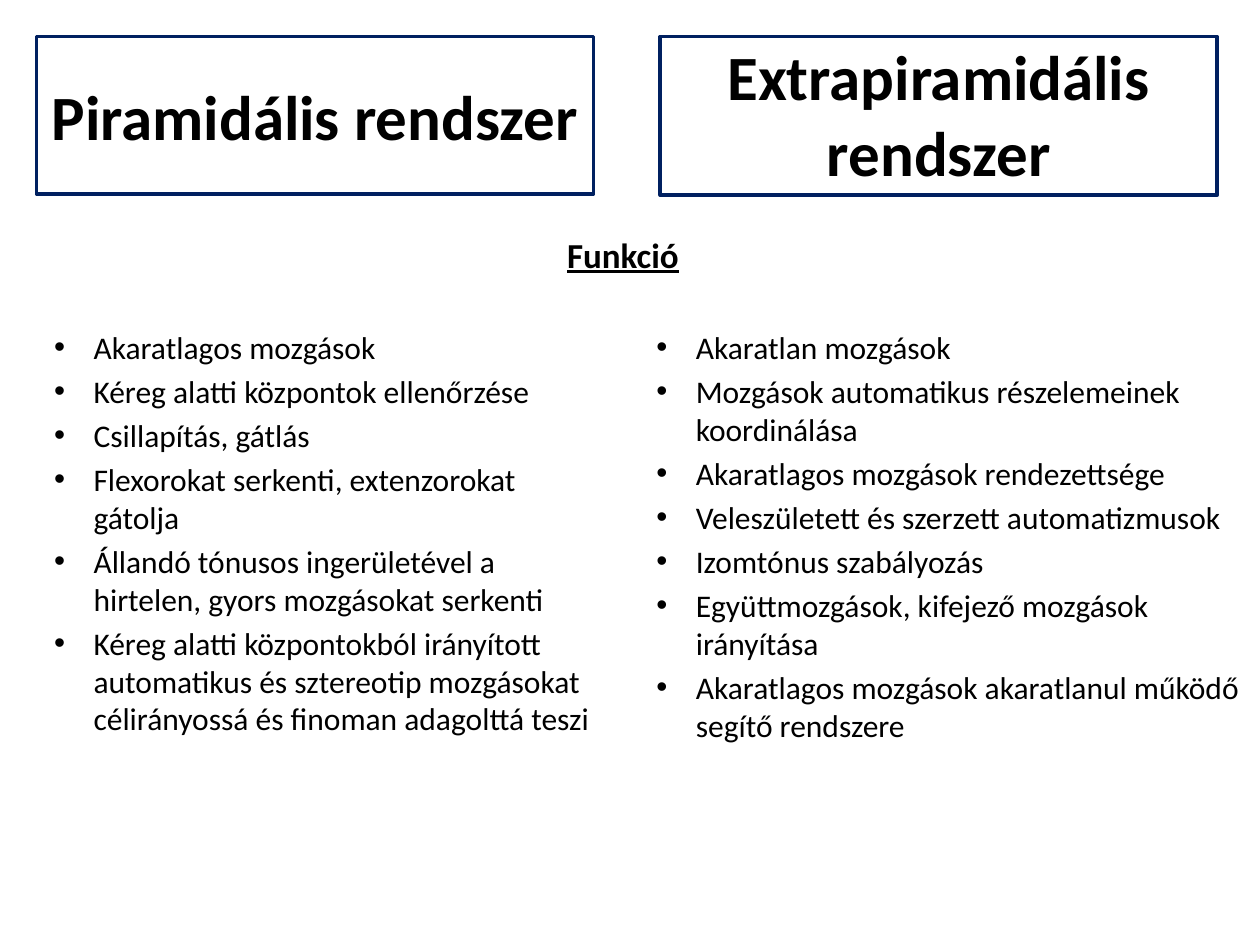
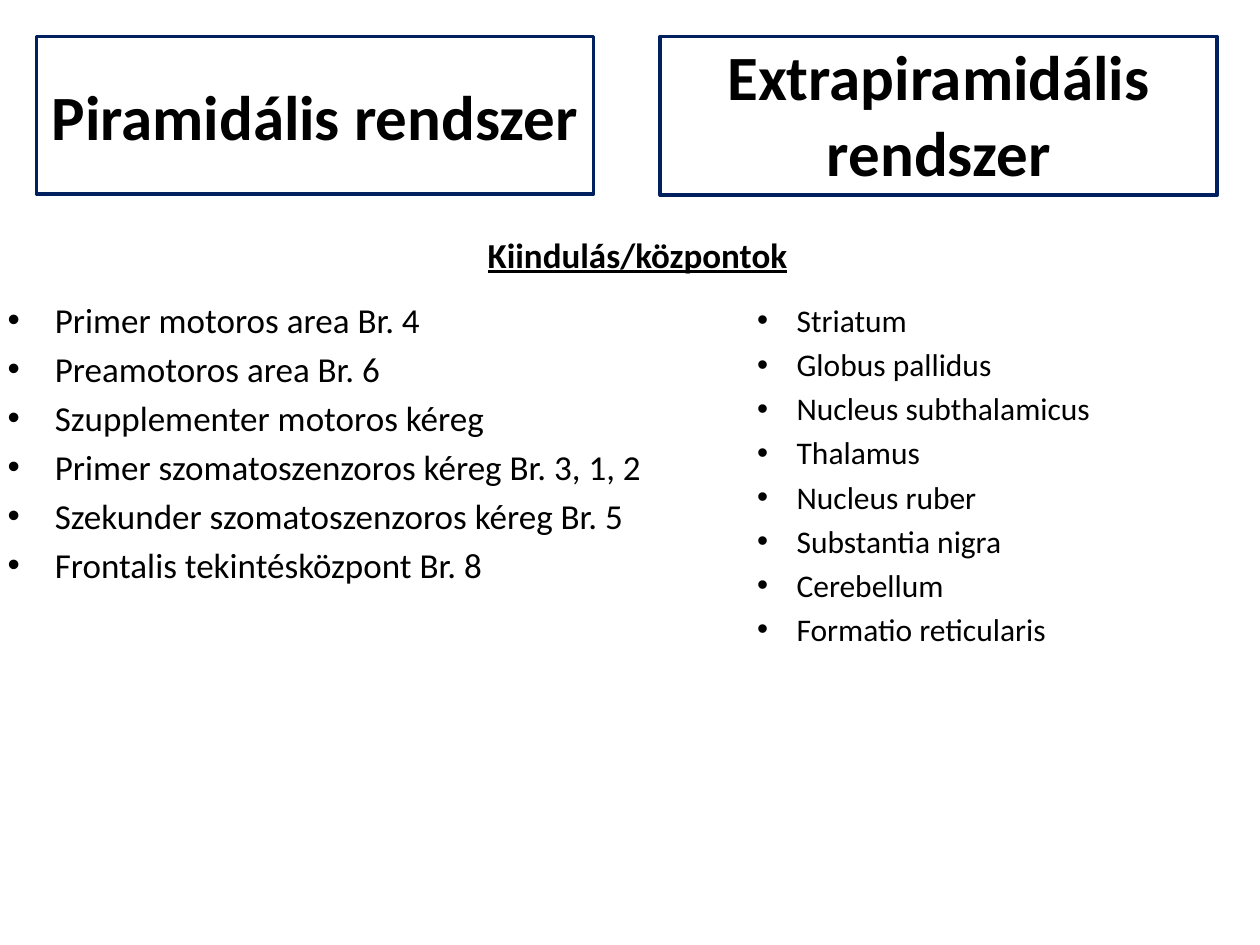
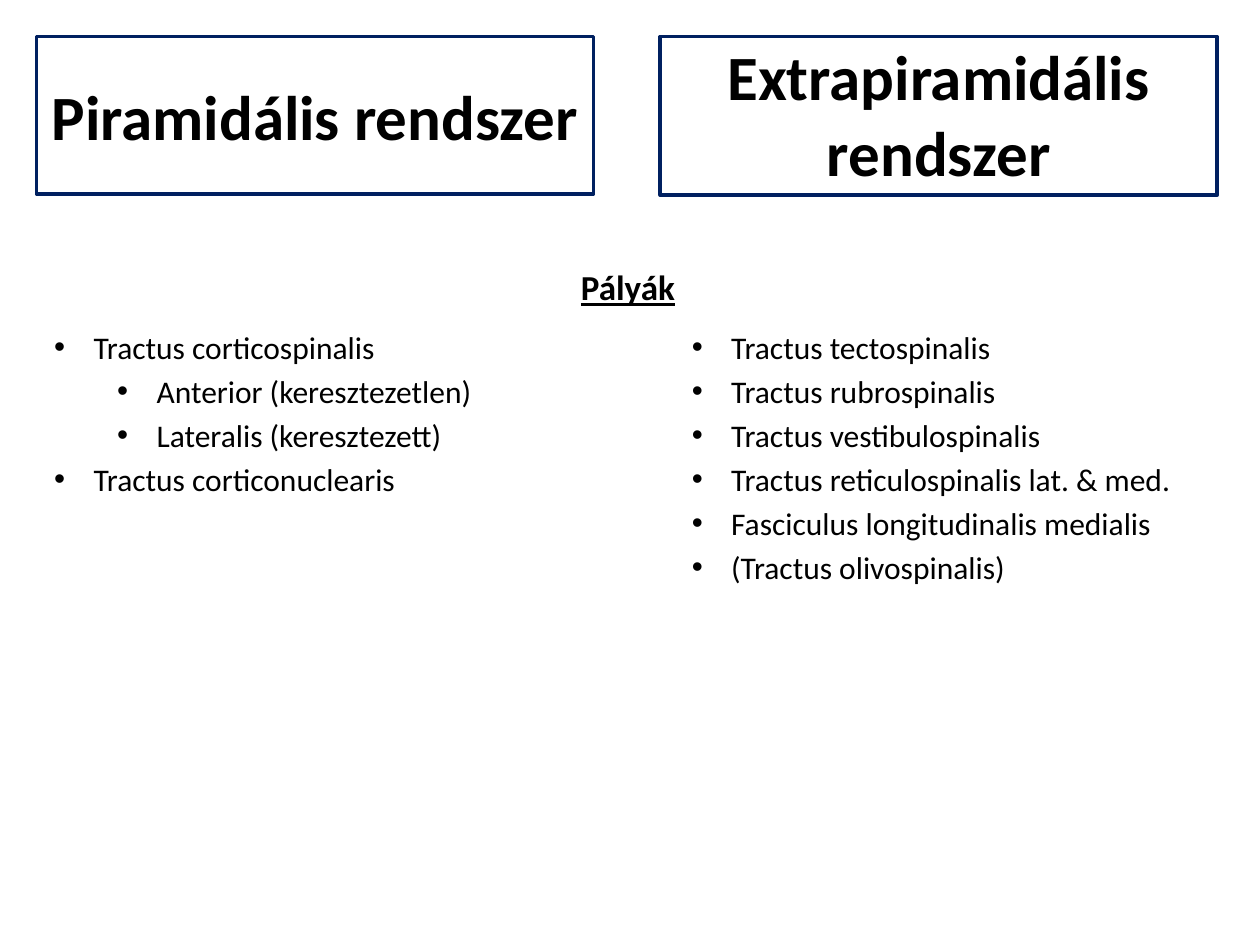
from dataclasses import dataclass

import pptx
import pptx.dml.color
import pptx.enum.text
import pptx.oxml.ns
import pptx.util
from lxml import etree

Pt = pptx.util.Pt
ALIGN = pptx.enum.text.PP_ALIGN
ANCHOR = pptx.enum.text.MSO_ANCHOR
COMPARISON_LAYOUT = 4


@dataclass(frozen=True)
class Theme:
    font: str = "Calibri"
    ink: str = "000000"
    frame: str = "002060"
    frame_width: float = 2
    system_size: float = 36
    topic_size: float = 20
    list_size: float = 18
    large_list_size: float = 20
    level_indent: float = 36
    hang: float = 22.5
    large_hang: float = 27
    paragraph_gap: float = 0.2  # share of the type size


THEME = Theme()

TOPICS = [
    dict(
        topic="Funkció",
        topic_box=(280.8, 129.6, 230.4, 33.84),
        pyramidal=[
            "Akaratlagos mozgások",
            "Kéreg alatti központok ellenőrzése",
            "Csillapítás, gátlás",
            "Flexorokat serkenti, extenzorokat gátolja",
            "Állandó tónusos ingerületével a hirtelen, gyors mozgásokat serkenti",
            "Kéreg alatti központokból irányított automatikus és sztereotip "
            "mozgásokat célirányossá és finoman adagolttá teszi",
        ],
        pyramidal_box=(-12.24, 183.6, 367.2, 48.24),
        extrapyramidal=[
            "Akaratlan mozgások",
            "Mozgások automatikus részelemeinek koordinálása",
            "Akaratlagos mozgások rendezettsége",
            "Veleszületett és szerzett automatizmusok",
            "Izomtónus szabályozás",
            "Együttmozgások, kifejező mozgások irányítása",
            "Akaratlagos mozgások akaratlanul működő segítő rendszere",
        ],
        extrapyramidal_box=(331.92, 183.6, 384.48, 48.24),
    ),
    dict(
        topic="Kiindulás/központok",
        topic_box=(235.44, 129.6, 226.8, 33.84),
        pyramidal=[
            "Primer motoros area Br. 4",
            "Preamotoros area Br. 6",
            "Szupplementer motoros kéreg",
            "Primer szomatoszenzoros kéreg Br. 3, 1, 2",
            "Szekunder szomatoszenzoros kéreg Br. 5",
            "Frontalis tekintésközpont Br. 8",
        ],
        pyramidal_box=(-38.88, 167.04, 437.04, 48.24),
        pyramidal_format=dict(size=THEME.large_list_size, hang=THEME.large_hang),
        extrapyramidal=[
            "Striatum",
            "Globus pallidus",
            "Nucleus subthalamicus",
            "Thalamus",
            "Nucleus ruber",
            "Substantia nigra",
            "Cerebellum",
            "Formatio reticularis",
        ],
        extrapyramidal_box=(389.52, 168.48, 335.52, 48.24),
    ),
    dict(
        topic="Pályák",
        topic_box=(288.72, 148.32, 177.12, 33.84),
        pyramidal=[
            "Tractus corticospinalis",
            ("Anterior (keresztezetlen)", 1),
            ("Lateralis (keresztezett)", 1),
            "Tractus corticonuclearis",
        ],
        pyramidal_box=(-12.24, 183.6, 364.32, 48.24),
        extrapyramidal=[
            "Tractus tectospinalis",
            "Tractus rubrospinalis",
            "Tractus vestibulospinalis",
            "Tractus reticulospinalis lat. & med.",
            "Fasciculus longitudinalis medialis",
            "(Tractus olivospinalis)",
        ],
        extrapyramidal_box=(352.08, 183.6, 364.32, 48.24),
    ),
]


def place(placeholder, box):
    left, top, width, height = map(Pt, box)
    placeholder.left, placeholder.top = left, top
    placeholder.width, placeholder.height = width, height


def set_indent(paragraph, left, hang=0, bullet=None):
    properties = paragraph._p.get_or_add_pPr()
    properties.set("marL", str(Pt(left)))
    properties.set("indent", str(-Pt(hang)))
    if bullet:
        qn = pptx.oxml.ns.qn
        etree.SubElement(properties, qn("a:buFont"), typeface="Arial")
        etree.SubElement(properties, qn("a:buChar"), char=bullet)


def write(placeholder, lines, *, size, bold=False, underline=False,
          align=ALIGN.LEFT, anchor=ANCHOR.TOP, indent=0, hang=0, bullet=None):
    """Fill with one paragraph per line; a line is a text or (text, level)."""
    frame = placeholder.text_frame
    frame.auto_size = pptx.enum.text.MSO_AUTO_SIZE.NONE
    frame.word_wrap = True
    frame.vertical_anchor = anchor
    for number, line in enumerate(lines):
        text, level = (line, 0) if isinstance(line, str) else line
        paragraph = frame.add_paragraph() if number else frame.paragraphs[0]
        paragraph.level = level
        paragraph.alignment = align
        paragraph.space_before = Pt(size * THEME.paragraph_gap if number else 0)
        set_indent(paragraph, indent + level * THEME.level_indent + hang, hang, bullet)
        run = paragraph.add_run()
        run.text = text
        run.font.name = THEME.font
        run.font.size = Pt(size)
        run.font.bold = bold
        run.font.underline = underline
        run.font.color.rgb = pptx.dml.color.RGBColor.from_string(THEME.ink)


def system_heading(placeholder, name, box, anchor):
    place(placeholder, box)
    placeholder.line.color.rgb = pptx.dml.color.RGBColor.from_string(THEME.frame)
    placeholder.line.width = Pt(THEME.frame_width)
    write(placeholder, [name], size=THEME.system_size, bold=True,
          align=ALIGN.CENTER, anchor=anchor)


def topic_title(placeholder, topic, box):
    place(placeholder, box)
    write(placeholder, [topic], size=THEME.topic_size, bold=True, underline=True,
          indent=THEME.level_indent)


def bullet_list(placeholder, items, box, size=THEME.list_size, hang=THEME.hang):
    place(placeholder, box)
    write(placeholder, items, size=size, indent=THEME.level_indent, hang=hang,
          bullet="•")


def comparison_slide(deck, topic, topic_box, pyramidal, pyramidal_box,
                     extrapyramidal, extrapyramidal_box, pyramidal_format=None):
    slide = deck.slides.add_slide(deck.slide_layouts[COMPARISON_LAYOUT])
    title, left_heading, left_list, right_heading, right_list = slide.placeholders
    topic_title(title, topic, topic_box)
    system_heading(left_heading, "Piramidális rendszer",
                   (20.88, 20.88, 318.24, 90), ANCHOR.MIDDLE)
    system_heading(right_heading, "Extrapiramidális rendszer",
                   (377.28, 20.88, 318.24, 90.72), ANCHOR.BOTTOM)
    bullet_list(left_list, pyramidal, pyramidal_box, **(pyramidal_format or {}))
    bullet_list(right_list, extrapyramidal, extrapyramidal_box)


def main():
    deck = pptx.Presentation()
    deck.slide_width, deck.slide_height = Pt(720), Pt(540)
    for content in TOPICS:
        comparison_slide(deck, **content)
    deck.save("out.pptx")


if __name__ == "__main__":
    main()
